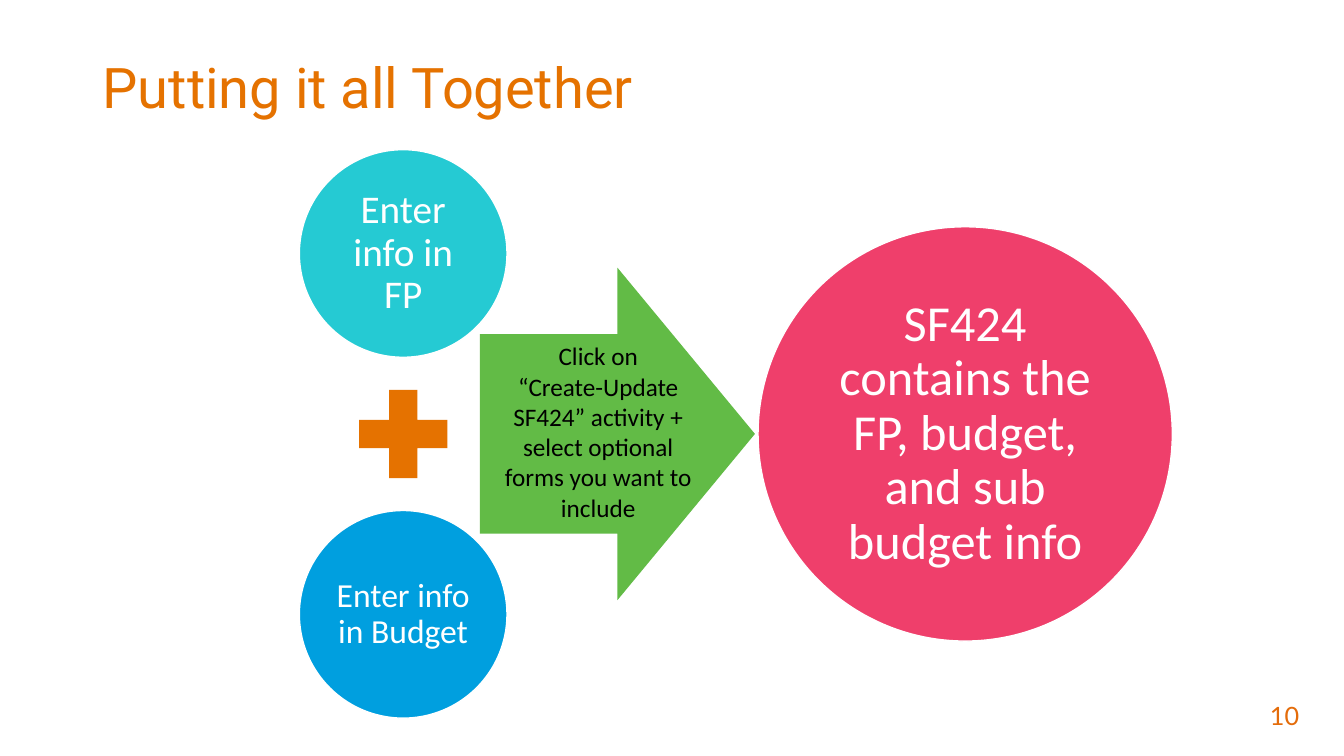
from dataclasses import dataclass

from pptx import Presentation
from pptx import util as u
from pptx.dml.color import RGBColor
from pptx.enum import shapes, text

CELL = u.Inches(0.1)  # square grid: 133.3 columns by 75 rows
COLS, ROWS = 133.33, 75
AXIS_ROW = 43.05  # centre line of the whole diagram
INPUT_COL = 40  # centre of the two inputs and the plus
INPUT_STEP = 17.9  # rows from the plus to either input


@dataclass(frozen=True)
class Theme:
    orange: str = "E57200"
    page_orange: str = "E46C0A"
    teal: str = "25CAD3"
    blue: str = "009FDF"
    green: str = "62BB46"
    pink: str = "EF3F6B"
    white: str = "FFFFFF"
    black: str = "000000"
    title_font: str = "Roboto"
    page_font: str = "Lato"
    body_font: str = "Calibri"
    title_size: int = 40
    result_size: int = 36
    first_size: int = 28
    second_size: int = 24
    small_size: int = 18


THEME = Theme()


def grid(*cells):
    return [round(c * CELL) for c in cells]


def set_all(obj, values):
    for name, value in values.items():
        setattr(obj, name, value)


def write(sp, lines, font, size, color, align, spacing=1.0, **frame):
    tf = sp.text_frame
    set_all(tf, {"word_wrap": True, **frame})
    for i, line in enumerate(lines):
        p = tf.paragraphs[0] if i == 0 else tf.add_paragraph()
        set_all(p, {"alignment": align, "line_spacing": spacing})
        r = p.add_run()
        r.text = line
        set_all(r.font, {"name": font, "size": u.Pt(size)})
        r.font.color.rgb = RGBColor.from_string(color)


def add_label(s, box, lines, **style):
    write(s.shapes.add_textbox(*grid(*box)), lines, **style)


def add_centred_shape(s, kind, col, row, width, height, fill):
    """Place a filled shape by its centre."""
    box = grid(col - width / 2, row - height / 2, width, height)
    sp = s.shapes.add_shape(kind, *box)
    sp.shadow.inherit = False
    sp.fill.solid()
    sp.fill.fore_color.rgb = RGBColor.from_string(fill)
    sp.line.fill.background()
    return sp


def add_circle(s, col, row, size, fill, line, type_size, inset):
    sp = add_centred_shape(s, shapes.MSO_SHAPE.OVAL, col, row, size, size, fill)
    sp.line.color.rgb = RGBColor.from_string(THEME.white)
    sp.line.width = u.Pt(1)
    sides = ("left", "right", "top", "bottom")
    margins = {f"margin_{side}": u.Inches(inset) for side in sides}
    write(sp, [line], THEME.body_font, type_size, THEME.white,
          text.PP_ALIGN.CENTER, 0.9,
          vertical_anchor=text.MSO_ANCHOR.MIDDLE, **margins)


def add_inputs(s):
    inputs = [
        (-1, THEME.teal, "Enter info in FP", THEME.first_size, 0.04),
        (1, THEME.blue, "Enter info in Budget", THEME.second_size, 0.03),
    ]
    for side, fill, line, size, inset in inputs:
        row = AXIS_ROW + side * INPUT_STEP
        add_circle(s, INPUT_COL, row, 20.6, fill, line, size, inset)
    add_centred_shape(s, shapes.MSO_SHAPE.MATH_PLUS, INPUT_COL, AXIS_ROW,
                      11.9, 11.9, THEME.orange)


def add_action(s):
    arrow = add_centred_shape(s, shapes.MSO_SHAPE.RIGHT_ARROW, 61.25, AXIS_ROW,
                              27.3, 33, THEME.green)
    arrow.adjustments[0], arrow.adjustments[1] = 0.6, 0.5
    add_label(s, (47.7, 33.3, 23.3, 19.2),
              ["Click on",
               "“Create-Update SF424” activity + select optional forms you want to include"],
              font=THEME.body_font, size=THEME.small_size, color=THEME.black,
              align=text.PP_ALIGN.CENTER)


def main():
    prs = Presentation()
    prs.slide_width, prs.slide_height = grid(COLS, ROWS)
    s = prs.slides.add_slide(prs.slide_layouts[6])

    add_label(s, (125, 69, 5.1, 4), ["10"], font=THEME.page_font,
              size=THEME.small_size, color=THEME.page_orange,
              align=text.PP_ALIGN.LEFT, word_wrap=False)
    add_label(s, (9.2, 4, 115, 10), ["Putting it all Together"],
              font=THEME.title_font, size=THEME.title_size, color=THEME.orange,
              align=text.PP_ALIGN.LEFT, spacing=0.9,
              vertical_anchor=text.MSO_ANCHOR.MIDDLE)
    add_inputs(s)
    add_circle(s, 95.75, AXIS_ROW, 41.1, THEME.pink,
               "SF424 contains the FP, budget, and sub budget info",
               THEME.result_size, 0.05)
    add_action(s)

    prs.save("out.pptx")


if __name__ == "__main__":
    main()
